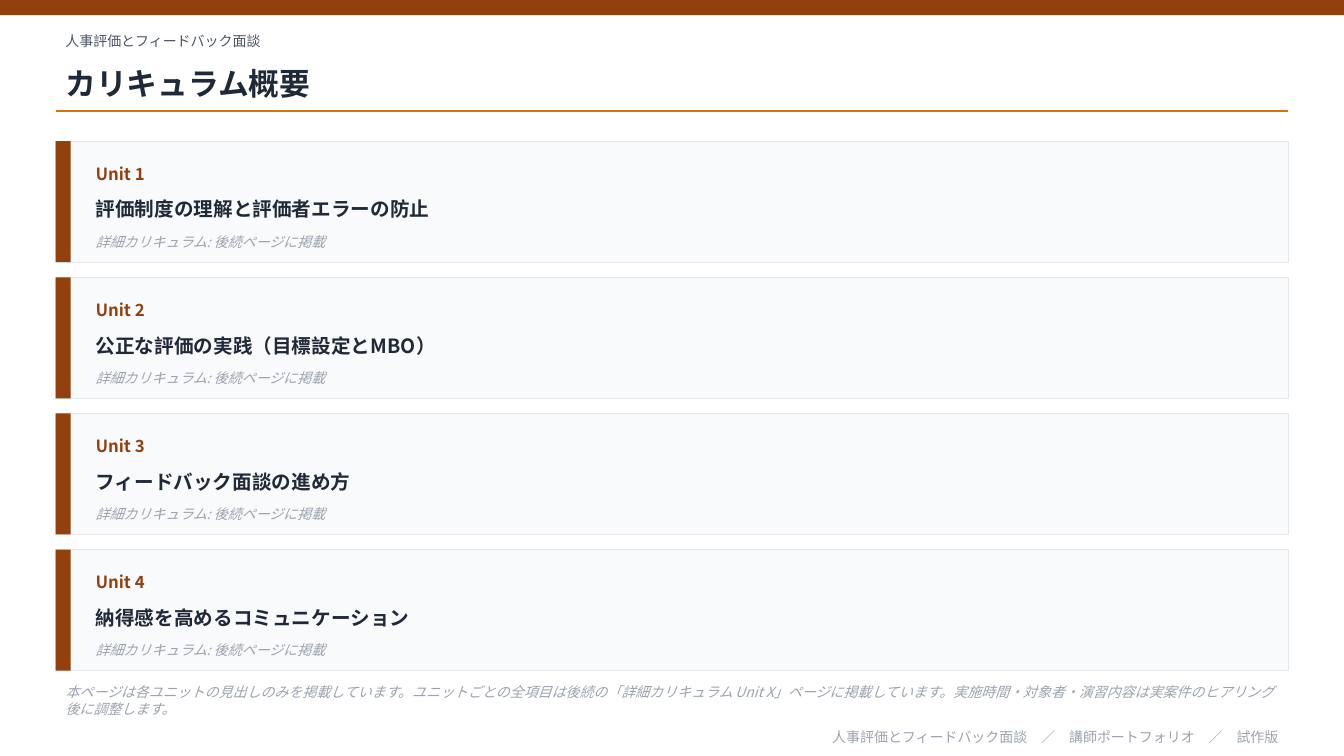
import pptx
import pptx.util
import pptx.dml.color
import pptx.enum.shapes
import pptx.enum.text
import pptx.oxml
import pptx.oxml.ns
from pptx.util import Cm

FONT = "Noto Sans CJK JP"
COLORS = {
    "brown": "92400E",
    "amber": "D97706",
    "ink": "1F2937",
    "slate": "4B5563",
    "muted": "9CA3AF",
    "card": "F9FAFB",
    "border": "E5E7EB",
}
COURSE = "人事評価とフィードバック面談"
UNITS = [
    "評価制度の理解と評価者エラーの防止",
    "公正な評価の実践（目標設定とMBO）",
    "フィードバック面談の進め方",
    "納得感を高めるコミュニケーション",
]
DETAIL = "詳細カリキュラム: 後続ページに掲載"
NOTE = (
    "本ページは各ユニットの見出しのみを掲載しています。"
    "ユニットごとの全項目は後続の「詳細カリキュラム Unit X」ページに掲載しています。"
    "実施時間・対象者・演習内容は実案件のヒアリング後に調整します。"
)
FOOTER = f"{COURSE}　／　講師ポートフォリオ　／　試作版"

# Page measures in centimetres
PAGE_W, PAGE_H = 33.87, 19.05
MARGIN = 1.4
CONTENT_W = 31.06
CARD_H, CARD_GAP = 3.05, 0.38


def rgb(name):
    return pptx.dml.color.RGBColor.from_string(COLORS[name])


def add_panel(slide, left, top, width, height, fill, border=None):
    panel = slide.shapes.add_shape(
        pptx.enum.shapes.MSO_SHAPE.RECTANGLE, Cm(left), Cm(top), Cm(width), Cm(height))
    panel.shadow.inherit = False
    panel.fill.solid()
    panel.fill.fore_color.rgb = rgb(fill)
    if border:
        panel.line.color.rgb = rgb(border)
        panel.line.width = pptx.util.Pt(0.5)
    else:
        panel.line.fill.background()


def add_label(slide, left, top, width, height, text, size, color,
              bold=False, italic=False, align=pptx.enum.text.PP_ALIGN.LEFT):
    frame = slide.shapes.add_textbox(Cm(left), Cm(top), Cm(width), Cm(height)).text_frame
    frame.word_wrap = True
    frame.vertical_anchor = pptx.enum.text.MSO_ANCHOR.MIDDLE
    paragraph = frame.paragraphs[0]
    paragraph.text = text
    paragraph.alignment = align
    font = paragraph.font
    font.name = FONT
    font.size = pptx.util.Pt(size)
    font.bold = bold
    font.italic = italic
    font.color.rgb = rgb(color)
    # East Asian typeface
    defaults = paragraph._p.pPr.find(pptx.oxml.ns.qn("a:defRPr"))
    east_asian = pptx.oxml.parse_xml(
        f'<a:ea {pptx.oxml.ns.nsdecls("a")} typeface="{FONT}"/>')
    defaults.append(east_asian)


def add_header(slide, left, top, width):
    add_panel(slide, 0, 0, PAGE_W, 0.38, "brown")
    add_label(slide, left, top, width, 0.76, COURSE, 10, "slate")
    add_label(slide, left, top + 0.76, width, 1.4, "カリキュラム概要", 22, "ink", bold=True)
    rule_y = Cm(top + 2.16)
    rule = slide.shapes.add_connector(
        pptx.enum.shapes.MSO_CONNECTOR.STRAIGHT, Cm(left), rule_y, Cm(left + width), rule_y)
    rule.line.color.rgb = rgb("amber")
    rule.line.width = pptx.util.Pt(1)
    rule._element.spPr.append(
        pptx.oxml.parse_xml(f'<a:effectLst {pptx.oxml.ns.nsdecls("a")}/>'))


def add_unit_card(slide, left, top, width, height, number, title):
    add_panel(slide, left, top, width, height, "card", "border")
    add_panel(slide, left, top, 0.38, height, "brown")
    text_left, text_w = left + 0.76, width - 1.27
    add_label(slide, text_left, top + 0.3, 3.81, 1.02, f"Unit {number}", 12, "brown", bold=True)
    add_label(slide, text_left, top + 1.14, text_w, 1.14, title, 14, "ink", bold=True)
    add_label(slide, text_left, top + 2.16, text_w, 0.76, DETAIL, 10, "muted", italic=True)


def add_footer(slide, left, top, width):
    add_label(slide, left, top, width, 1.02, NOTE, 10, "muted", italic=True)
    add_label(slide, left, top + 1.14, width, 0.56, FOOTER, 10, "muted",
              align=pptx.enum.text.PP_ALIGN.RIGHT)


def main():
    deck = pptx.Presentation()
    deck.slide_width, deck.slide_height = Cm(PAGE_W), Cm(PAGE_H)
    slide = deck.slides.add_slide(deck.slide_layouts[6])

    add_header(slide, MARGIN, 0.64, CONTENT_W)
    for index, title in enumerate(UNITS):
        card_top = 3.56 + index * (CARD_H + CARD_GAP)
        add_unit_card(slide, MARGIN, card_top, CONTENT_W, CARD_H, index + 1, title)
    add_footer(slide, MARGIN, 17.15, CONTENT_W)

    deck.save("out.pptx")


if __name__ == "__main__":
    main()
